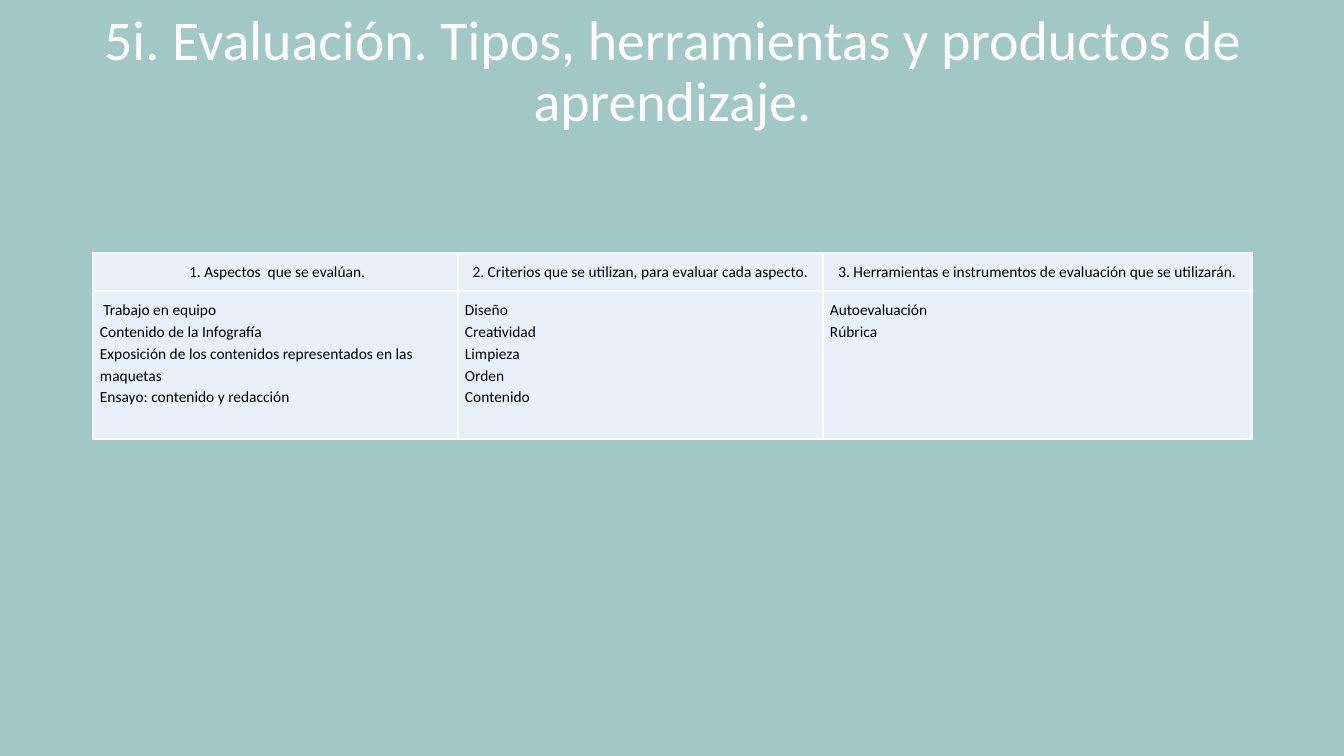
from lxml.etree import SubElement
from pptx import Presentation
from pptx.dml.color import RGBColor
from pptx.enum.text import MSO_ANCHOR, PP_ALIGN
from pptx.oxml.ns import qn
from pptx.util import Emu, Pt

EMU_PER_PX = 914400 / 100.8
SAGE = RGBColor(0xA1, 0xC8, 0xC5)
PALE_BLUE = RGBColor(0xE8, 0xF1, 0xFA)
WHITE = RGBColor(0xFF, 0xFF, 0xFF)
BLACK = RGBColor(0x00, 0x00, 0x00)
FONT = "Calibri"

TITLE = "5i. Evaluación. Tipos, herramientas y productos de aprendizaje."
HEADINGS = [
    " 1. Aspectos  que se evalúan.",
    "2. Criterios que se utilizan, para evaluar cada aspecto.",
    "3. Herramientas e instrumentos de evaluación que se utilizarán.",
]
DETAILS = [
    [" Trabajo en equipo", "Contenido de la Infografía",
     "Exposición de los contenidos representados en las maquetas",
     "Ensayo: contenido y redacción"],
    ["Diseño", "Creatividad", "Limpieza", "Orden", "Contenido"],
    ["Autoevaluación", "Rúbrica"],
]
COLUMN_WIDTHS = [365, 365, 429]
ROW_HEIGHTS = [38, 148]


def px(length):
    return Emu(round(length * EMU_PER_PX))


def write_lines(frame, lines, size, color, align, spacing):
    frame.word_wrap = True
    frame.text = "\n".join(lines)
    for paragraph in frame.paragraphs:
        paragraph.alignment = align
        paragraph.line_spacing = spacing
        paragraph.font.name = FONT
        paragraph.font.size = Pt(size)
        paragraph.font.color.rgb = color


def add_title(slide, left, top, width, height):
    title = slide.shapes.add_textbox(px(left), px(top), px(width), px(height))
    title.text_frame.vertical_anchor = MSO_ANCHOR.MIDDLE
    write_lines(title.text_frame, [TITLE], 40, WHITE, PP_ALIGN.CENTER, 0.9)


def style_cell(cell):
    cell.margin_left = cell.margin_right = px(7)
    cell.margin_top = cell.margin_bottom = px(7)
    # Borders come before the fill in the cell properties
    properties = cell._tc.get_or_add_tcPr()
    for side in ("a:lnL", "a:lnR", "a:lnT", "a:lnB"):
        border = SubElement(properties, qn(side), w=str(Pt(1)))
        border_fill = SubElement(border, qn("a:solidFill"))
        SubElement(border_fill, qn("a:srgbClr"), val=str(WHITE))
    cell.fill.solid()
    cell.fill.fore_color.rgb = PALE_BLUE


def add_evaluation_table(slide, left, top, width, height):
    table = slide.shapes.add_table(
        len(ROW_HEIGHTS), len(COLUMN_WIDTHS),
        px(left), px(top), px(width), px(height)).table
    table.first_row = table.horz_banding = False
    for row, row_height in zip(table.rows, ROW_HEIGHTS):
        row.height = px(row_height)
    for column, column_width in zip(table.columns, COLUMN_WIDTHS):
        column.width = px(column_width)

    for index, (heading, details) in enumerate(zip(HEADINGS, DETAILS)):
        contents = [([heading], PP_ALIGN.CENTER), (details, PP_ALIGN.LEFT)]
        for row_index, (lines, align) in enumerate(contents):
            cell = table.cell(row_index, index)
            style_cell(cell)
            write_lines(cell.text_frame, lines, 11, BLACK, align, 1.15)


def main():
    presentation = Presentation()
    presentation.slide_width = px(1344)
    presentation.slide_height = px(756)
    slide = presentation.slides.add_slide(presentation.slide_layouts[6])
    slide.background.fill.solid()
    slide.background.fill.fore_color.rgb = SAGE

    left, width = 93, sum(COLUMN_WIDTHS)
    add_title(slide, left, 0, width, 146)
    add_evaluation_table(slide, left, 253, width, sum(ROW_HEIGHTS))
    presentation.save("out.pptx")


if __name__ == "__main__":
    main()
